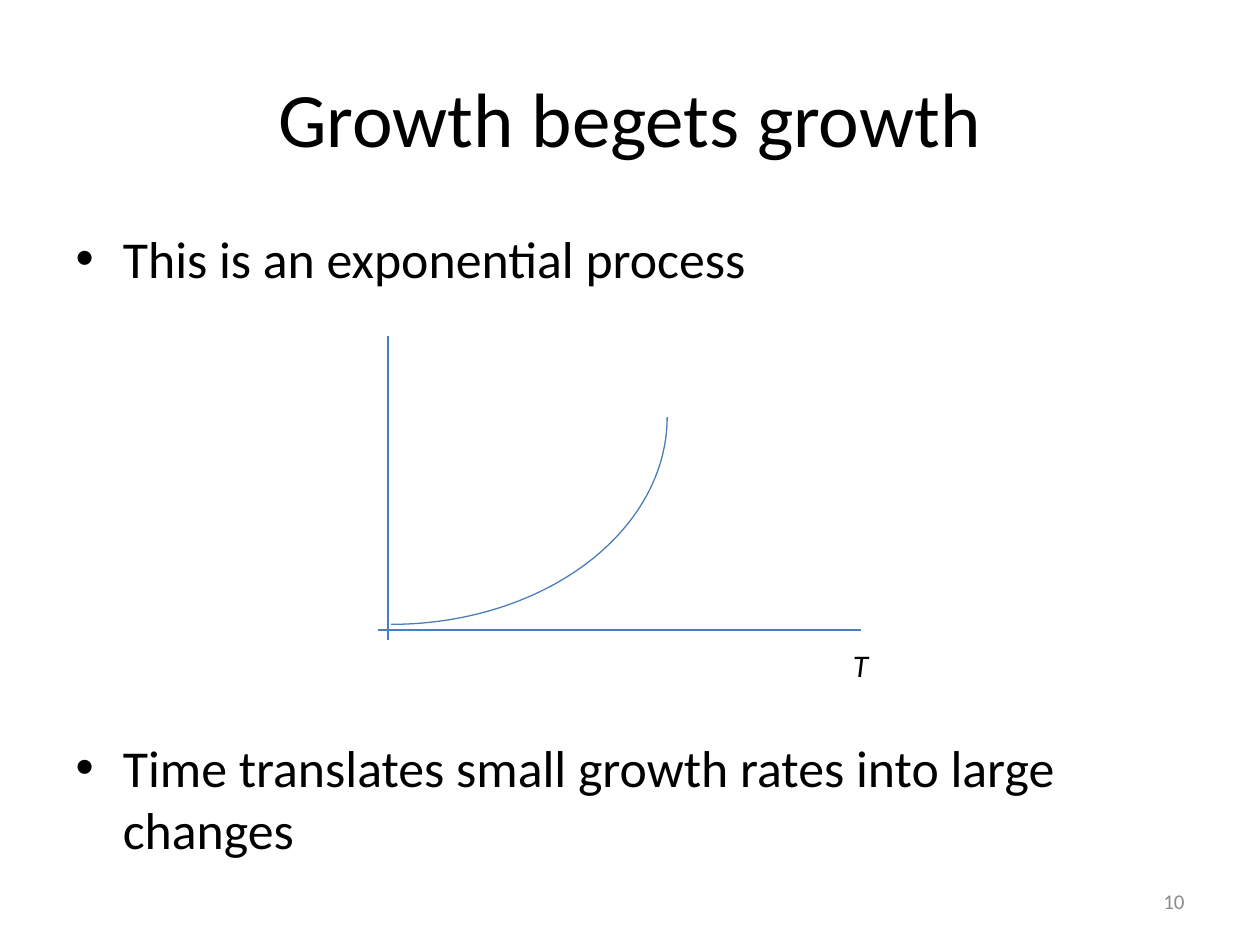
from pptx import Presentation
from pptx.dml.color import RGBColor
from pptx.enum.shapes import MSO_CONNECTOR, MSO_SHAPE
from pptx.enum.text import MSO_ANCHOR, MSO_AUTO_SIZE, PP_ALIGN
from pptx.oxml.ns import qn
from pptx.util import Inches, Pt
from lxml import etree

BLACK = RGBColor(0x00, 0x00, 0x00)
GRAY = RGBColor(0x8C, 0x8C, 0x8C)
BLUE = RGBColor(0x4B, 0x7E, 0xBC)


def write(para, text, size, color=BLACK, italic=None, align=None):
    para.alignment = align
    span = para.add_run()
    span.text = text
    span.font.name = "Calibri"
    span.font.size = Pt(size)
    span.font.color.rgb = color
    span.font.italic = italic


def place(shape, left, top, width, height):
    shape.left, shape.top = Inches(left), Inches(top)
    shape.width, shape.height = Inches(width), Inches(height)


deck = Presentation()
deck.slide_width, deck.slide_height = Inches(10), Inches(7.5)
page = deck.slides.add_slide(deck.slide_layouts[1])

# Title
title = page.shapes.title
place(title, 0.5, 0.3, 9, 1.25)
title.text_frame.vertical_anchor = MSO_ANCHOR.MIDDLE
write(title.text_frame.paragraphs[0], "Growth begets growth", 44,
      align=PP_ALIGN.CENTER)

# Bullets, with room for the graph between them
body = page.placeholders[1]
place(body, 0.5, 1.75, 9, 4.95)
body.text_frame.auto_size = MSO_AUTO_SIZE.NONE
write(body.text_frame.paragraphs[0], "This is an exponential process", 29.6)
closing = body.text_frame.add_paragraph()
closing.space_before = Pt(255)
write(closing, "Time translates small growth rates into large changes", 29.6)

# Slide number
number_box = page.shapes.add_textbox(
    Inches(7.17), Inches(6.95), Inches(2.33), Inches(0.4))
number_box.text_frame.word_wrap = True
number_box.text_frame.vertical_anchor = MSO_ANCHOR.MIDDLE
write(number_box.text_frame.paragraphs[0], "10", 12, color=GRAY,
      align=PP_ALIGN.RIGHT)

# Graph axes: vertical, then horizontal
for x1, y1, x2, y2 in [(3.08, 2.67, 3.08, 5.08), (6.83, 5, 3, 5)]:
    axis = page.shapes.add_connector(
        MSO_CONNECTOR.STRAIGHT, Inches(x1), Inches(y1), Inches(x2), Inches(y2))
    axis.line.color.rgb = BLUE
    axis.line.width = Pt(1.5)
    etree.SubElement(axis.element.spPr, qn("a:effectLst"))

# Time axis label
label_box = page.shapes.add_textbox(
    Inches(6.67), Inches(5.08), Inches(0.83), Inches(0.4))
label_box.text_frame.word_wrap = True
write(label_box.text_frame.paragraphs[0], "T", 18, italic=True)

# Growth curve: a quarter arc turned to rise to the right
curve = page.shapes.add_shape(
    MSO_SHAPE.ARC, Inches(1.46), Inches(1.12), Inches(3.29), Inches(4.38))
curve.rotation = 90
curve.shadow.inherit = False
curve.fill.background()
curve.line.color.rgb = BLUE
curve.line.width = Pt(0.75)

deck.save("out.pptx")
